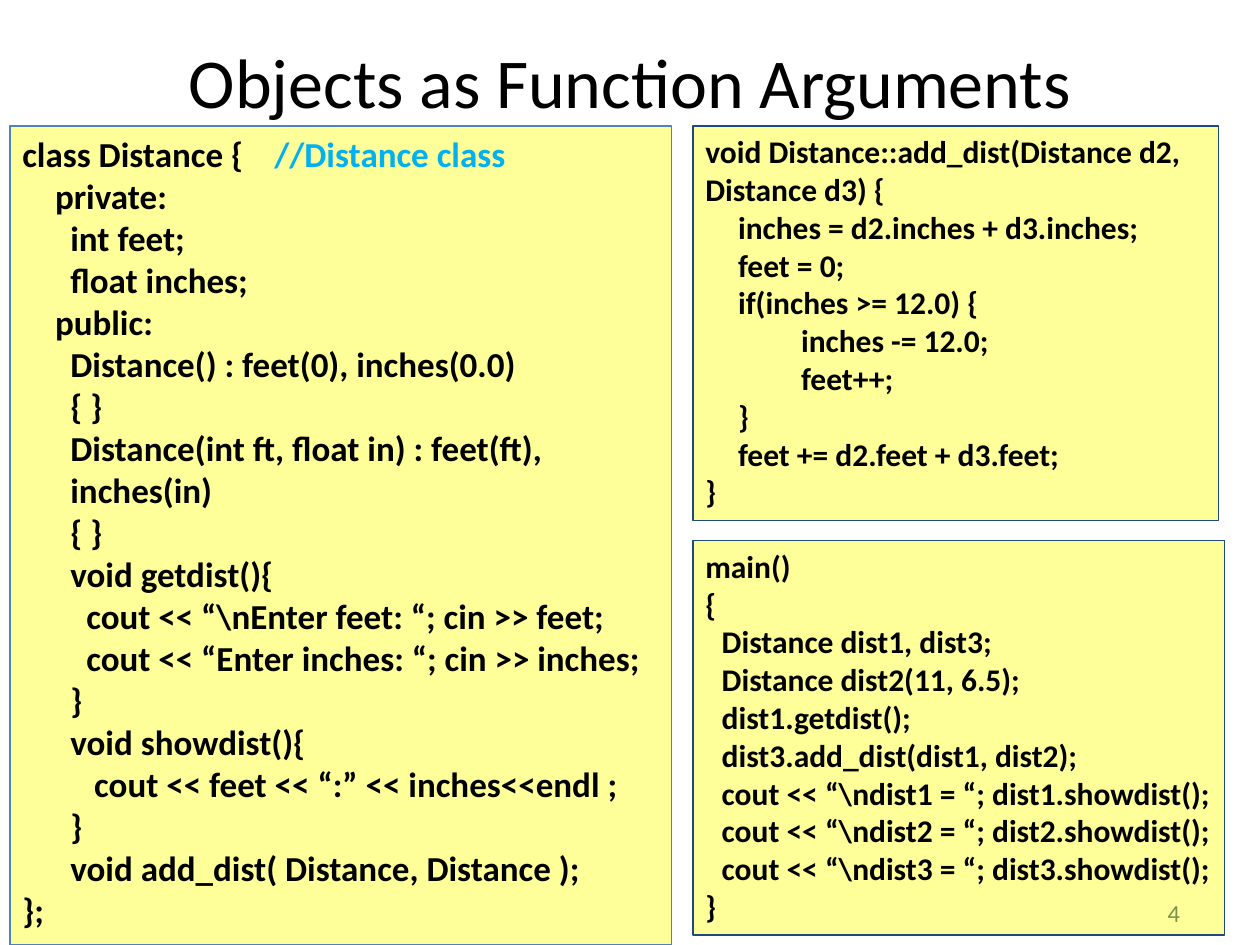
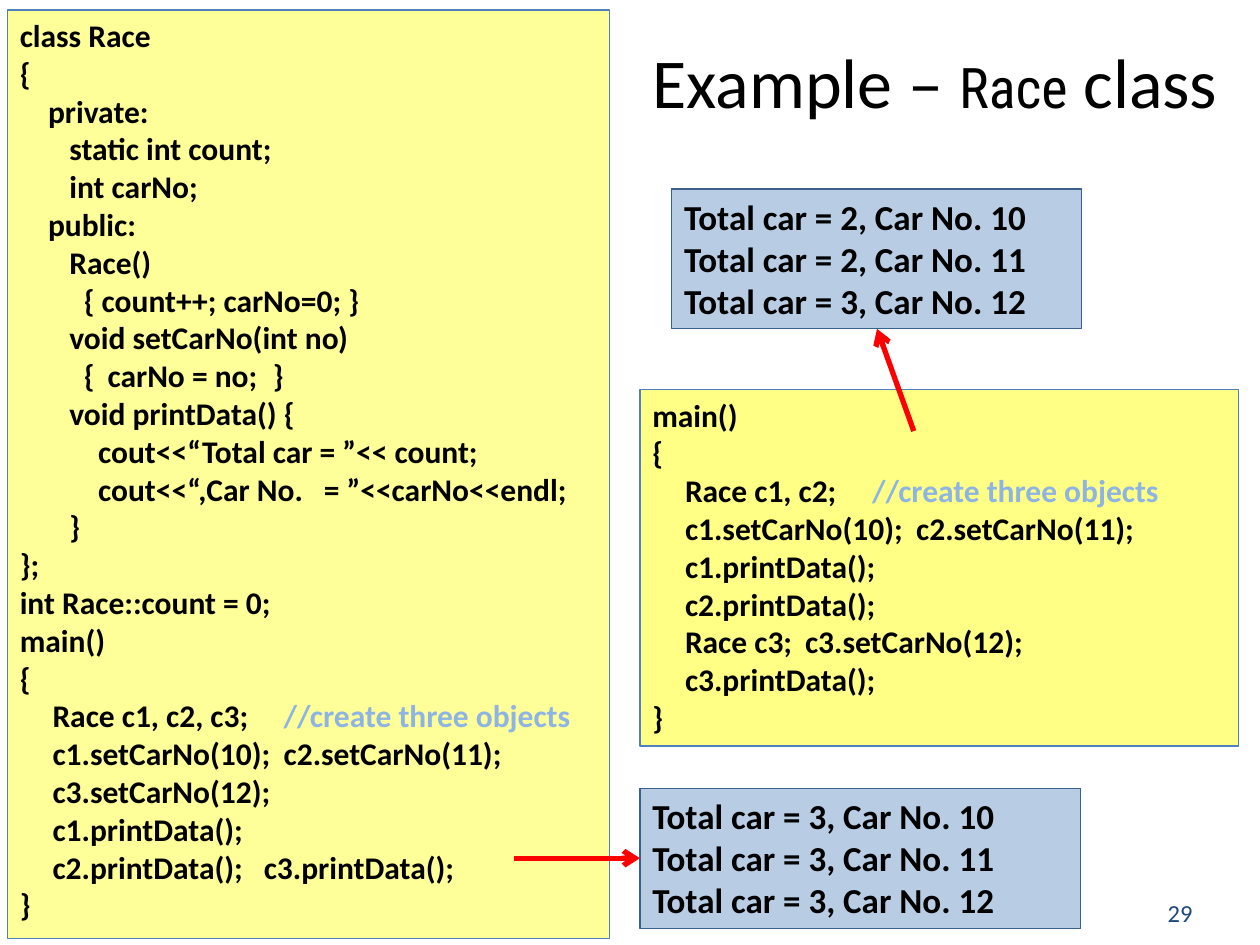
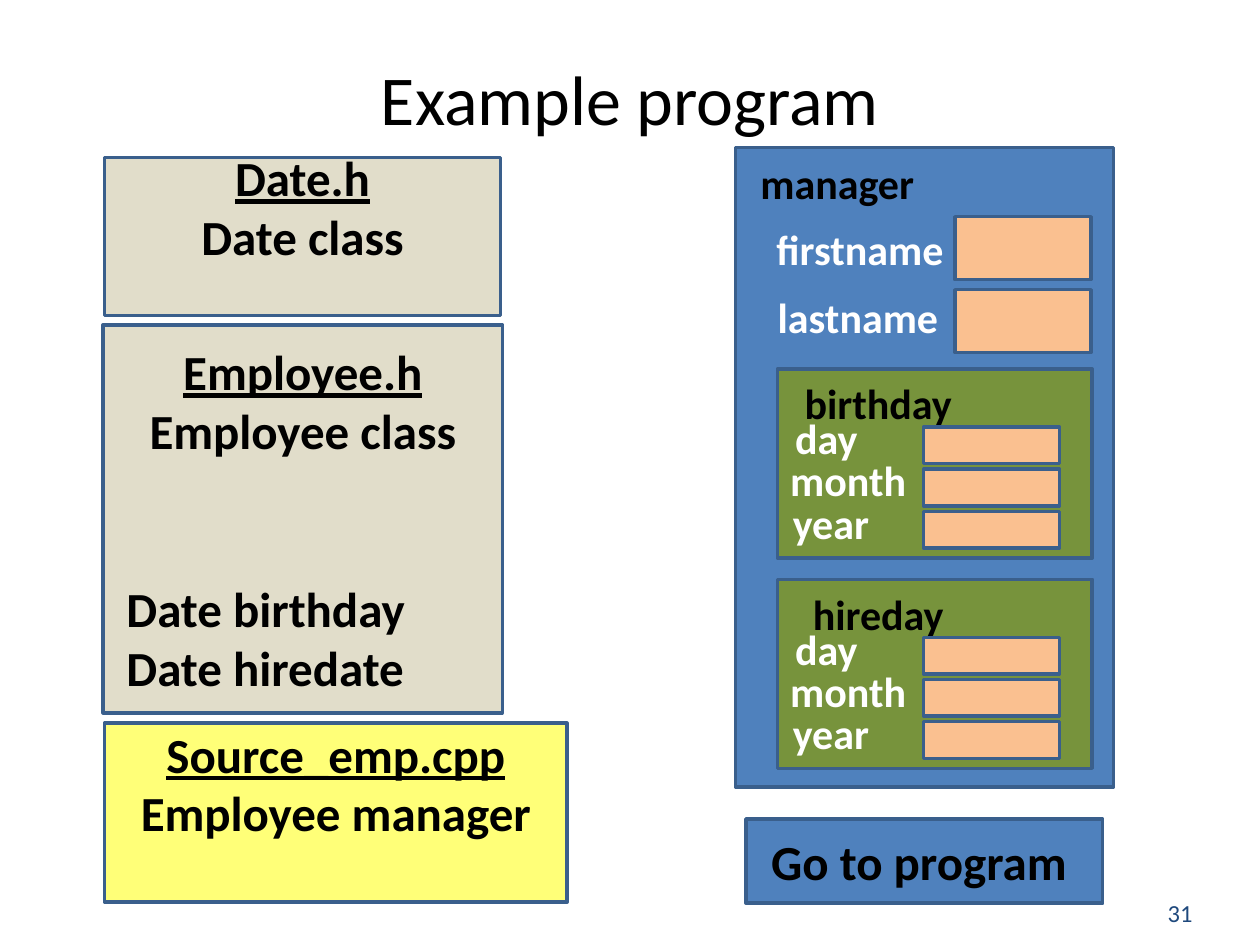
import collections

import lxml.etree
import pptx
import pptx.dml.color
import pptx.enum.shapes
import pptx.enum.text
import pptx.oxml.ns
import pptx.util

Cm = pptx.util.Cm
Box = collections.namedtuple("Box", "left top width height")
Align = pptx.enum.text.PP_ALIGN
Anchor = pptx.enum.text.MSO_ANCHOR

BLACK, WHITE, YELLOW, RED = "000000", "FFFFFF", "FFFF00", "FF0000"
NAVY, BLUE, EDGE = "1F497D", "4F81BD", "3A5F8C"
SKY, PALE_BLUE = "00B0F0", "8EB4E3"
TAN, GREEN, PEACH = "C4BD97", "77933C", "FAC090"

PAGE_NUMBER_BOX = Box(23.29, 17.98, 1.7, 0.84)

DISTANCE_CLASS = [
    (0, "class Distance {\t//Distance class", 5.08),
    (0.66, "private:"),
    (0.97, "int feet;"),
    (0.97, "float inches;"),
    (0.66, "public:"),
    (0.97, "Distance() : feet(0), inches(0.0)"),
    (0.97, "{ }"),
    (0.97, "Distance(int ft, float in) : feet(ft), inches(in)"),
    (0.97, "{ }"),
    (0.97, "void getdist(){"),
    (1.29, "cout << “\\nEnter feet: “; cin >> feet;"),
    (1.29, "cout << “Enter inches: “; cin >> inches;"),
    (0.97, "}"),
    (0.97, "void showdist(){"),
    (1.45, "cout << feet << “:” << inches<<endl ;"),
    (0.97, "}"),
    (0.97, "void add_dist( Distance, Distance );"),
    (0, "};"),
]
ADD_DISTANCE = [
    (0, "void Distance::add_dist(Distance d2, Distance d3) {"),
    (0.66, "inches = d2.inches + d3.inches;"),
    (0.66, "feet = 0;"),
    (0.66, "if(inches >= 12.0) {"),
    (1.93, "inches -= 12.0;"),
    (1.93, "feet++;"),
    (0.66, "}"),
    (0.66, "feet += d2.feet + d3.feet;"),
    (0, "}"),
]
DISTANCE_MAIN = [
    (0, "main()"),
    (0, "{"),
    (0.33, "Distance dist1, dist3;"),
    (0.33, "Distance dist2(11, 6.5);"),
    (0.33, "dist1.getdist();"),
    (0.33, "dist3.add_dist(dist1, dist2);"),
    *[(0.33, f"cout << “\\ndist{n} = “; dist{n}.showdist();") for n in (1, 2, 3)],
    (0, "}"),
]
RACE_CLASS = [
    (0, "class Race"),
    (0, "{"),
    (0.57, "private:"),
    (1, "static int count;"),
    (1, "int carNo;"),
    (0.57, "public:"),
    (1, "Race()"),
    (1.29, "{ count++; carNo=0; }"),
    (1, "void setCarNo(int no)"),
    (1.29, "{\tcarNo = no;\t}", 1.77, 5.1),
    (1, "void printData() {"),
    (1.58, "cout<<“Total car = ”<< count;"),
    (1.58, "cout<<“,Car No.\t= ”<<carNo<<endl;", 6.13),
    (1, "}"),
    (0, "};"),
    (0, "int Race::count = 0;"),
    (0, "main()"),
    (0, "{"),
    (0.66, "Race c1, c2, c3;\t//create three objects", 5.32),
    (0.66, "c1.setCarNo(10);\tc2.setCarNo(11);", 5.32),
    (0.66, "c3.setCarNo(12);"),
    (0.66, "c1.printData();"),
    (0.66, "c2.printData();\tc3.printData();", 4.92),
    (0, "}"),
]
RACE_MAIN = [
    (0, "main()"),
    (0, "{"),
    (0.66, "Race c1, c2;\t//create three objects", 4.43),
    (0.66, "c1.setCarNo(10);\tc2.setCarNo(11);", 5.32),
    (0.66, "c1.printData();"),
    (0.66, "c2.printData();"),
    (0.66, "Race c3;\tc3.setCarNo(12);", 3.08),
    (0.66, "c3.printData();"),
    (0, "}"),
]


def hex_color(value):
    return pptx.dml.color.RGBColor.from_string(value)


def add_child(parent, tag, **attributes):
    child = lxml.etree.SubElement(parent, pptx.oxml.ns.qn(tag))
    for name, value in attributes.items():
        child.set(name, str(value))
    return child


def write_text(paragraph, text, size=18, color=BLACK, bold=True, underline=False, font="Calibri"):
    run = paragraph.add_run()
    run.text = text
    run.font.name = font
    run.font.size = pptx.util.Pt(size)
    run.font.bold = bold
    run.font.underline = underline
    run.font.color.rgb = hex_color(color)


def next_paragraph(frame, align=Align.LEFT):
    first = frame.paragraphs[0]
    paragraph = frame.add_paragraph() if first.runs else first
    paragraph.alignment = align
    return paragraph


def inside(box, left, top, width, height):
    return Box(box.left + left, box.top + top, width, height)


def prepare_frame(shape, anchor):
    frame = shape.text_frame
    frame.word_wrap = True
    frame.vertical_anchor = anchor
    return frame


def add_text_box(shapes, box, anchor=Anchor.MIDDLE):
    return prepare_frame(shapes.add_textbox(*map(Cm, box)), anchor)


def add_panel(shapes, box, fill, line=EDGE, line_width=2, opacity=100, anchor=Anchor.MIDDLE):
    shape = shapes.add_shape(pptx.enum.shapes.MSO_SHAPE.RECTANGLE, *map(Cm, box))
    shape.shadow.inherit = False
    shape.fill.solid()
    shape.fill.fore_color.rgb = hex_color(fill)
    if opacity < 100:
        fill_color = shape._element.spPr.find(".//" + pptx.oxml.ns.qn("a:srgbClr"))
        add_child(fill_color, "a:alpha", val=opacity * 1000)
    shape.line.color.rgb = hex_color(line)
    shape.line.width = pptx.util.Pt(line_width)
    return prepare_frame(shape, anchor)


def add_arrow(shapes, start, end):
    straight = pptx.enum.shapes.MSO_CONNECTOR.STRAIGHT
    connector = shapes.add_connector(straight, *map(Cm, start + end))
    connector.line.color.rgb = hex_color(RED)
    connector.line.width = pptx.util.Pt(3)
    add_child(connector.line._get_or_add_ln(), "a:tailEnd", type="arrow")
    add_child(connector._element.spPr, "a:effectLst")


def add_slide(presentation, number, title_box, *title_runs):
    slide = presentation.slides.add_slide(presentation.slide_layouts[6])
    frame = add_text_box(slide.shapes, PAGE_NUMBER_BOX)
    write_text(next_paragraph(frame), str(number), size=14, color=NAVY, bold=False)
    paragraph = next_paragraph(add_text_box(slide.shapes, title_box), Align.CENTER)
    for text, style in title_runs:
        write_text(paragraph, text, **{"size": 40, "bold": False, **style})
    return slide.shapes


def set_indent(paragraph, indent, tab_stops=()):
    properties = paragraph._p.get_or_add_pPr()
    if not tab_stops:
        properties.set("marL", str(Cm(indent)))
        return
    tab_list = add_child(properties, "a:tabLst")
    for stop in tab_stops:
        add_child(tab_list, "a:tab", pos=Cm(stop), algn="l")


def code_panel(shapes, box, lines, size=18, line=BLUE, comment=PALE_BLUE, opacity=40):
    frame = add_panel(shapes, box, YELLOW, line, 0.75, opacity, Anchor.TOP)
    for indent, text, *stops in lines:
        paragraph = next_paragraph(frame)
        if stops and indent:
            stops = [indent, *stops]
            text = "\t" + text
        set_indent(paragraph, indent, stops)
        code, slashes, remark = text.partition("//")
        write_text(paragraph, code, size=size)
        if slashes:
            write_text(paragraph, slashes + remark, size=size, color=comment)


def output_panel(shapes, box, totals):
    frame = add_panel(shapes, box, BLUE, EDGE, 0.75, 40, Anchor.TOP)
    for car_number, total in enumerate(totals, 10):
        write_text(next_paragraph(frame), f"Total car = {total}, Car No. {car_number}", size=20)


def file_panel(shapes, box, file_name, content, members=(), fill=TAN, opacity=50):
    frame = add_panel(shapes, box, fill, opacity=opacity)
    write_text(next_paragraph(frame, Align.CENTER), file_name, size=28, underline=True)
    write_text(next_paragraph(frame, Align.CENTER), content, size=28)
    for index, member in enumerate(members):
        paragraph = next_paragraph(frame)
        set_indent(paragraph, 0.22)
        paragraph.space_before = pptx.util.Pt(0 if index else 68.4)
        write_text(paragraph, member, size=28)
    if not members:
        frame.margin_bottom = Cm(1.33)


def add_label(shapes, box, text, color=WHITE, align=Align.CENTER):
    write_text(next_paragraph(add_text_box(shapes, box), align), text, size=24, color=color)


def date_card(slide_shapes, box, name):
    shapes = slide_shapes.add_group_shape().shapes
    add_panel(shapes, box, GREEN)
    add_label(shapes, inside(box, 0.18, 0.05, 3.71, 1.27), name, BLACK)
    parts = [("day", -0.05, 2.08), ("month", -0.08, 3.02), ("year", -0.43, 3.02)]
    for row, (part, left, width) in enumerate(parts):
        add_label(shapes, inside(box, left, 1.07 + 0.85 * row, width, 0.64), part)
        add_panel(shapes, inside(box, 2.95, 1.17 + 0.85 * row, 2.74, 0.74), PEACH)


def manager_card(slide_shapes, box):
    shapes = slide_shapes.add_group_shape().shapes
    add_panel(shapes, box, BLUE)
    add_label(shapes, inside(box, 0.25, 0.25, 4.37, 0.94), "manager", BLACK, Align.LEFT)
    add_label(shapes, inside(box, 0.36, 1.4, 4.29, 1.27), "firstname")
    add_label(shapes, inside(box, 0.51, 2.79, 3.91, 1.27), "lastname")
    for top in (1.4, 2.87):
        add_panel(shapes, inside(box, 4.42, top, 2.74, 1.27), PEACH)
    for row, name in enumerate(["birthday", "hireday"]):
        date_card(slide_shapes, inside(box, 0.84, 4.47 + 4.24 * row, 6.35, 3.81), name)


def arguments_slide(presentation):
    shapes = add_slide(presentation, 4, Box(1.27, 0.64, 22.86, 1.98),
                       ("Objects as Function Arguments", {}))
    code_panel(shapes, Box(0.2, 2.54, 13.34, 16.51), DISTANCE_CLASS, size=20, comment=SKY)
    code_panel(shapes, Box(13.97, 2.54, 10.59, 7.95), ADD_DISTANCE, line=NAVY)
    code_panel(shapes, Box(13.97, 10.9, 10.72, 7.95), DISTANCE_MAIN, line=NAVY)


def race_slide(presentation):
    shapes = add_slide(presentation, 29, Box(12.5, 0.64, 12.7, 1.98),
                       ("Example – ", {}),
                       ("Race", {"size": 32, "font": "Roboto Condensed"}),
                       (" class", {}))
    code_panel(shapes, Box(0.15, 0.2, 12.14, 18.72), RACE_CLASS)
    code_panel(shapes, Box(12.9, 7.85, 12.07, 7.19), RACE_MAIN, opacity=48)
    output_panel(shapes, Box(12.9, 15.9, 8.89, 2.82), [3, 3, 3])
    output_panel(shapes, Box(13.54, 3.81, 8.26, 2.82), [2, 2, 3])
    add_arrow(shapes, (10.36, 17.3), (12.9, 17.3))
    add_arrow(shapes, (18.42, 8.69), (17.68, 6.63))


def program_slide(presentation):
    shapes = add_slide(presentation, 31, Box(1.27, 0.97, 22.86, 1.98), ("Example program", {}))
    file_panel(shapes, Box(2.11, 3.18, 7.98, 3.18), "Date.h", "Date class")
    file_panel(shapes, Box(2.08, 6.55, 8.05, 7.82), "Employee.h", "Employee class",
               ["Date birthday", "Date hiredate"])
    file_panel(shapes, Box(2.11, 14.58, 9.32, 3.61), "Source_emp.cpp", "Employee manager",
               fill=YELLOW, opacity=53)
    button = add_panel(shapes, Box(15.04, 16.51, 7.19, 1.7), BLUE)
    write_text(next_paragraph(button, Align.CENTER), "Go to program ", size=28)
    manager_card(shapes, Box(14.83, 2.97, 7.62, 12.9))


def main():
    presentation = pptx.Presentation()
    presentation.slide_width = Cm(25.4)
    presentation.slide_height = Cm(19.05)
    arguments_slide(presentation)
    race_slide(presentation)
    program_slide(presentation)
    presentation.save("out.pptx")


if __name__ == "__main__":
    main()
